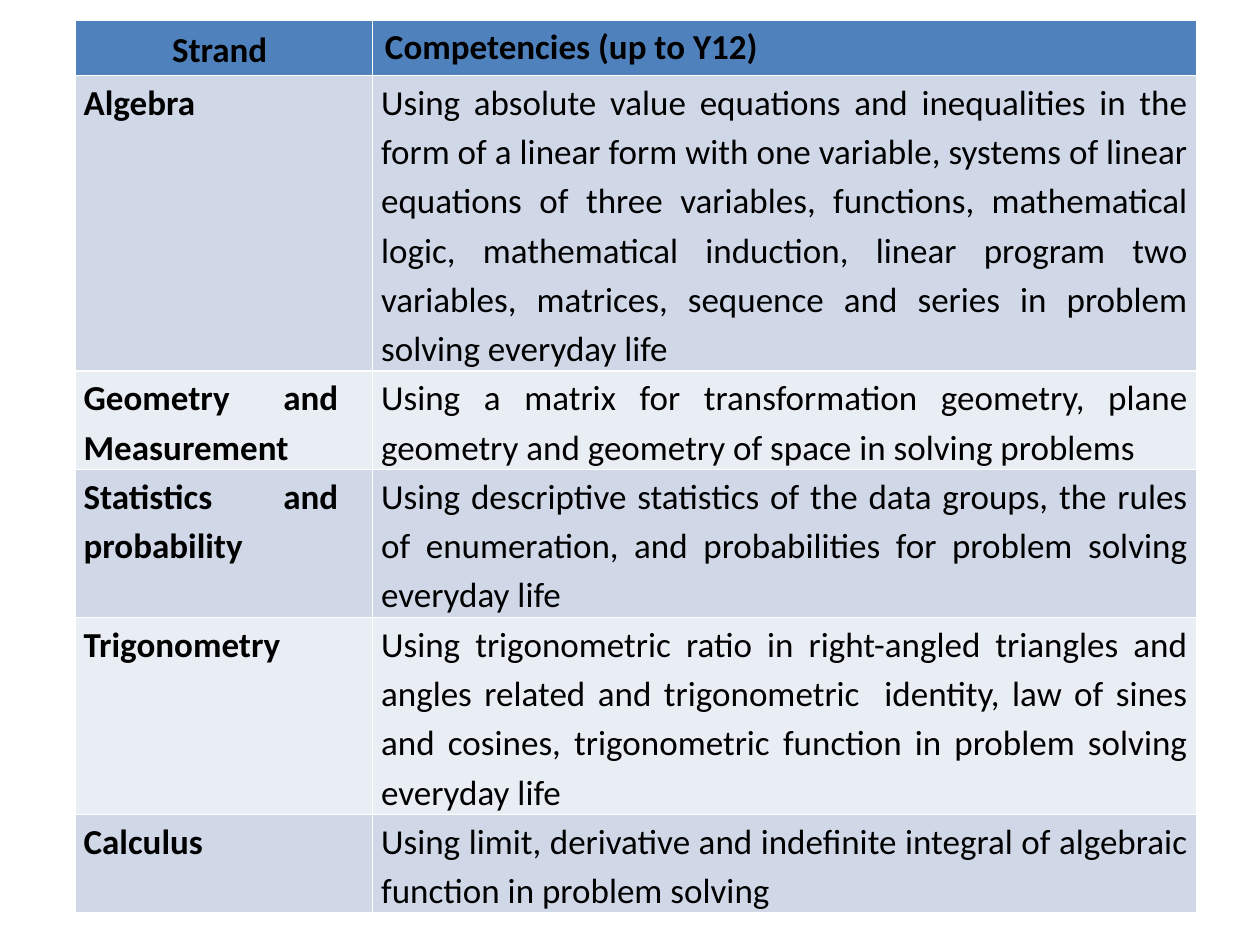
from pptx import Presentation
from pptx.dml.color import RGBColor
from pptx.enum.text import MSO_ANCHOR as Anchor, PP_ALIGN as Align
from pptx.util import Pt

COLORS = {"header": "4F81BD", "dark band": "D0D8E8", "light band": "E9EDF4", "text": "000000"}
HEADINGS = ("Strand", "Competencies (up to Y12)")
STRANDS = [
    ("Algebra",
     "Using absolute value equations and inequalities in the form of a linear form with one "
     "variable, systems of linear equations of three variables, functions, mathematical logic, "
     "mathematical induction, linear program two variables, matrices, sequence and series in "
     "problem solving everyday life"),
    ("Geometry and Measurement",
     "Using a matrix for transformation geometry, plane geometry and geometry of space in "
     "solving problems"),
    ("Statistics and probability",
     "Using descriptive statistics of the data groups, the rules of enumeration, and "
     "probabilities for problem solving everyday life"),
    ("Trigonometry",
     "Using trigonometric ratio in right-angled triangles and angles related and trigonometric  "
     "identity, law of sines and cosines, trigonometric function in problem solving everyday life"),
    ("Calculus",
     "Using limit, derivative and indefinite integral of algebraic function in problem solving"),
]
COLUMN_WIDTHS = (170, 471)
ROW_HEIGHT = 29.5

TIGHT = {"margin_left": Pt(5), "margin_right": Pt(5), "margin_top": 0, "margin_bottom": 0}
STRAND_HEADING = {**TIGHT, "margin_right": Pt(9.5), "vertical_anchor": Anchor.MIDDLE}
STRAND_CELL = {**TIGHT, "margin_right": Pt(19.5)}
CENTERED = {"alignment": Align.CENTER, "line_spacing": 1.15}
JUSTIFIED = {"alignment": Align.JUSTIFY, "line_spacing": 1.15}
SPACED = {**JUSTIFIED, "space_after": Pt(6)}
HEADER_FORMATS = [(STRAND_HEADING, CENTERED), ({}, {})]
BODY_FORMATS = [(STRAND_CELL, JUSTIFIED), (TIGHT, SPACED)]


def set_attributes(target, values):
    for name, value in values.items():
        setattr(target, name, value)


presentation = Presentation()
presentation.slide_width, presentation.slide_height = Pt(720), Pt(540)
slide = presentation.slides.add_slide(presentation.slide_layouts[6])

rows = [HEADINGS] + STRANDS
table_frame = slide.shapes.add_table(
    len(rows), len(COLUMN_WIDTHS), Pt(42.8), Pt(11.4),
    Pt(sum(COLUMN_WIDTHS)), Pt(ROW_HEIGHT * len(rows)))
table = table_frame.table
for column, width in zip(table.columns, COLUMN_WIDTHS):
    column.width = Pt(width)

for row_index, texts in enumerate(rows):
    table.rows[row_index].height = Pt(ROW_HEIGHT)
    is_header = row_index == 0
    band = "header" if is_header else ("light band", "dark band")[row_index % 2]
    formats = HEADER_FORMATS if is_header else BODY_FORMATS
    for column_index, text in enumerate(texts):
        cell_format, paragraph_format = formats[column_index]
        cell = table.cell(row_index, column_index)
        cell.fill.solid()
        cell.fill.fore_color.rgb = RGBColor.from_string(COLORS[band])
        set_attributes(cell, cell_format)
        paragraph = cell.text_frame.paragraphs[0]
        set_attributes(paragraph, paragraph_format)
        run = paragraph.add_run()
        run.text = text
        set_attributes(run.font, {"name": "Calibri", "size": Pt(20),
                                  "bold": is_header or column_index == 0})
        run.font.color.rgb = RGBColor.from_string(COLORS["text"])

table_frame.height = Pt(500.4)
presentation.save("out.pptx")
